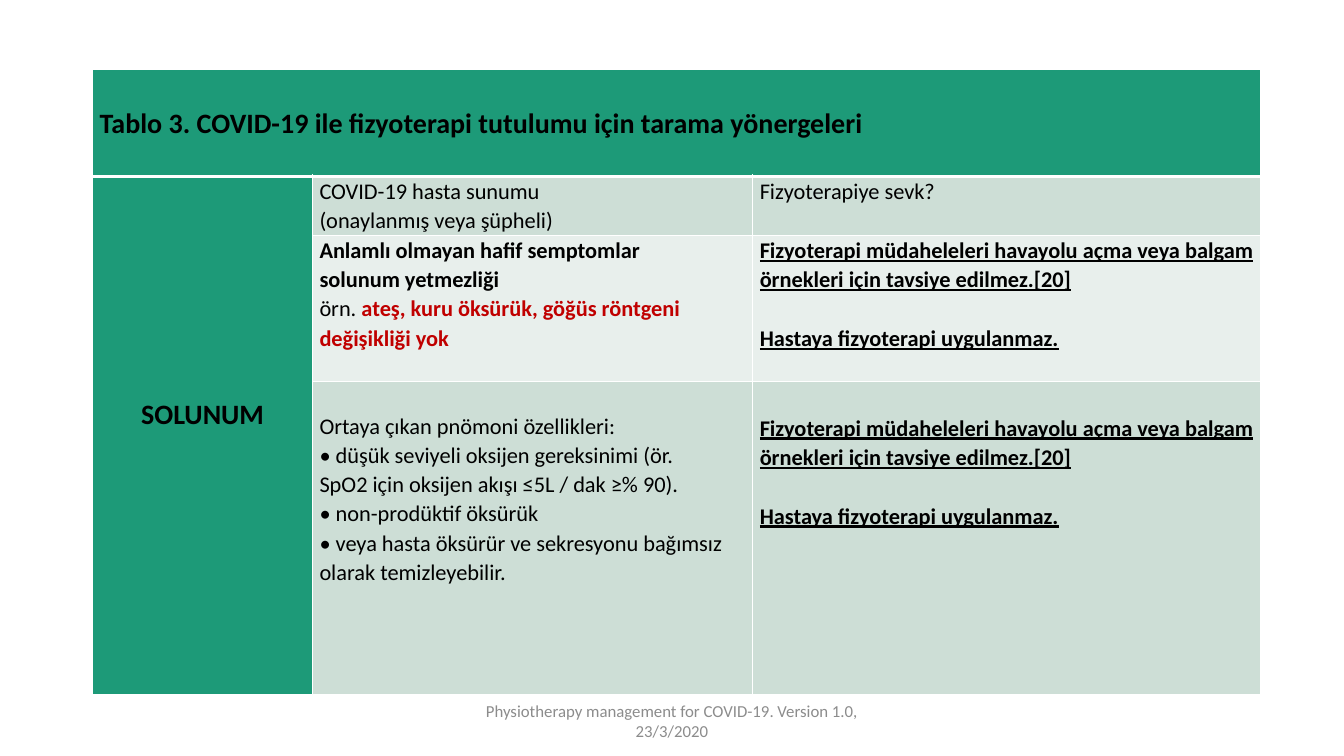
from pptx import Presentation
from pptx.dml.color import RGBColor
from pptx.enum.text import MSO_ANCHOR, PP_ALIGN
from pptx.oxml import parse_xml
from pptx.oxml.ns import nsdecls
from pptx.util import Pt

CENTER = PP_ALIGN.CENTER
LEFT = PP_ALIGN.LEFT
MIDDLE = MSO_ANCHOR.MIDDLE
TOP = MSO_ANCHOR.TOP

GREEN = RGBColor(0x1D, 0x9A, 0x78)
BAND_DARK = RGBColor(0xCD, 0xDE, 0xD6)
BAND_LIGHT = RGBColor(0xE8, 0xEF, 0xEC)
BLACK = RGBColor(0, 0, 0)
RED = RGBColor(0xC0, 0, 0)
GREY = RGBColor(0x8C, 0x8C, 0x8C)
WHITE = RGBColor(0xFF, 0xFF, 0xFF)


def add_run(paragraph, text, size, color=BLACK, bold=False, underline=False):
    run = paragraph.add_run()
    run.text = text
    font = run.font
    font.name = "Calibri"
    font.size = Pt(size)
    font.color.rgb = color
    font.bold = bold
    font.underline = underline


def add_border(cell, side, width):
    cell._tc.get_or_add_tcPr().append(parse_xml(
        f'<a:ln{side} {nsdecls("a")} w="{Pt(width)}"><a:solidFill>'
        f'<a:srgbClr val="{WHITE}"/></a:solidFill></a:ln{side}>'))


prs = Presentation()
prs.slide_width = Pt(960)
prs.slide_height = Pt(540)
slide = prs.slides.add_slide(prs.slide_layouts[6])

# Table grid
column_widths = [157, 314.5, 363]
row_heights = [76.5, 42, 104.5, 224]
guideline = slide.shapes.add_table(
    4, 3, Pt(66.25), Pt(49.5), Pt(sum(column_widths)), Pt(sum(row_heights))).table
guideline.first_row = False
guideline.horz_banding = False
for column, width in zip(guideline.columns, column_widths):
    column.width = Pt(width)
for row, height in zip(guideline.rows, row_heights):
    row.height = Pt(height)

# Borders and fills, with a thick rule under the title
row_fills = [GREEN, BAND_DARK, BAND_LIGHT, BAND_DARK]
for r, row_fill in enumerate(row_fills):
    for c in range(3):
        cell = guideline.cell(r, c)
        for side in "LRTB":
            thick = (r, side) in [(0, "B"), (1, "T")]
            add_border(cell, side, 3 if thick else 1)
        cell.fill.solid()
        cell.fill.fore_color.rgb = GREEN if c == 0 else row_fill
guideline.cell(0, 0).merge(guideline.cell(0, 2))
guideline.cell(1, 0).merge(guideline.cell(3, 0))

# Cell texts: each paragraph is a list of (text, run format)
plain, bold = {}, {"bold": True}
advice_format = {"bold": True, "underline": True}
advice = [
    [("Fizyoterapi müdaheleleri havayolu açma veya balgam örnekleri için "
      "tavsiye edilmez.[20]", advice_format)],
    [("Hastaya fizyoterapi uygulanmaz.", advice_format)],
]
# (row, column): size, top margin, gap between paragraphs, alignment, anchor, paragraphs
contents = {
    (0, 0): (20, 0, 0, LEFT, MIDDLE, [
        [("Tablo 3. COVID-19 ile fizyoterapi tutulumu için tarama yönergeleri", bold)]]),
    (1, 0): (20, 156.5, 0, CENTER, TOP, [[("SOLUNUM", bold)]]),
    (1, 1): (16, 0, 0, LEFT, TOP, [
        [("COVID-19 hasta sunumu", plain)],
        [("(onaylanmış veya şüpheli)", plain)]]),
    (1, 2): (16, 0, 0, LEFT, TOP, [[("Fizyoterapiye sevk?", plain)]]),
    (2, 1): (16, 0, 0, LEFT, TOP, [
        [("Anlamlı olmayan hafif semptomlar", bold)],
        [("solunum yetmezliği", bold)],
        [("örn. ", plain),
         ("ateş, kuru öksürük, göğüs röntgeni değişikliği yok",
          {"bold": True, "color": RED})]]),
    (2, 2): (16, 0, 21, LEFT, TOP, advice),
    (3, 1): (16, 21, 0, LEFT, TOP, [
        [("Ortaya çıkan pnömoni özellikleri:", plain)],
        [("• düşük seviyeli oksijen gereksinimi (ör.", plain)],
        [("SpO2 için oksijen akışı ≤5L / dak ≥% 90).", plain)],
        [("• non-prodüktif öksürük", plain)],
        [("• veya hasta öksürür ve sekresyonu bağımsız olarak temizleyebilir.", plain)]]),
    (3, 2): (16, 22.5, 21, LEFT, TOP, advice),
}
for (r, c), (size, top, gap, alignment, anchor, paragraphs) in contents.items():
    cell = guideline.cell(r, c)
    cell.margin_left = cell.margin_right = Pt(5)
    cell.margin_top, cell.margin_bottom = Pt(top), Pt(0)
    cell.vertical_anchor = anchor
    for i, runs in enumerate(paragraphs):
        frame = cell.text_frame
        paragraph = frame.add_paragraph() if i else frame.paragraphs[0]
        paragraph.alignment = alignment
        paragraph.line_spacing = 1.07
        paragraph.space_before = Pt(gap if i else 0)
        for text, run_format in runs:
            add_run(paragraph, text, size, **run_format)

# Footer
footer = slide.shapes.add_textbox(Pt(318), Pt(500.5), Pt(324), Pt(28.75)).text_frame
footer.word_wrap = True
footer.vertical_anchor = MIDDLE
footer.paragraphs[0].alignment = CENTER
add_run(footer.paragraphs[0],
        "Physiotherapy management for COVID-19. Version 1.0, 23/3/2020", 12, GREY)

prs.save("out.pptx")
